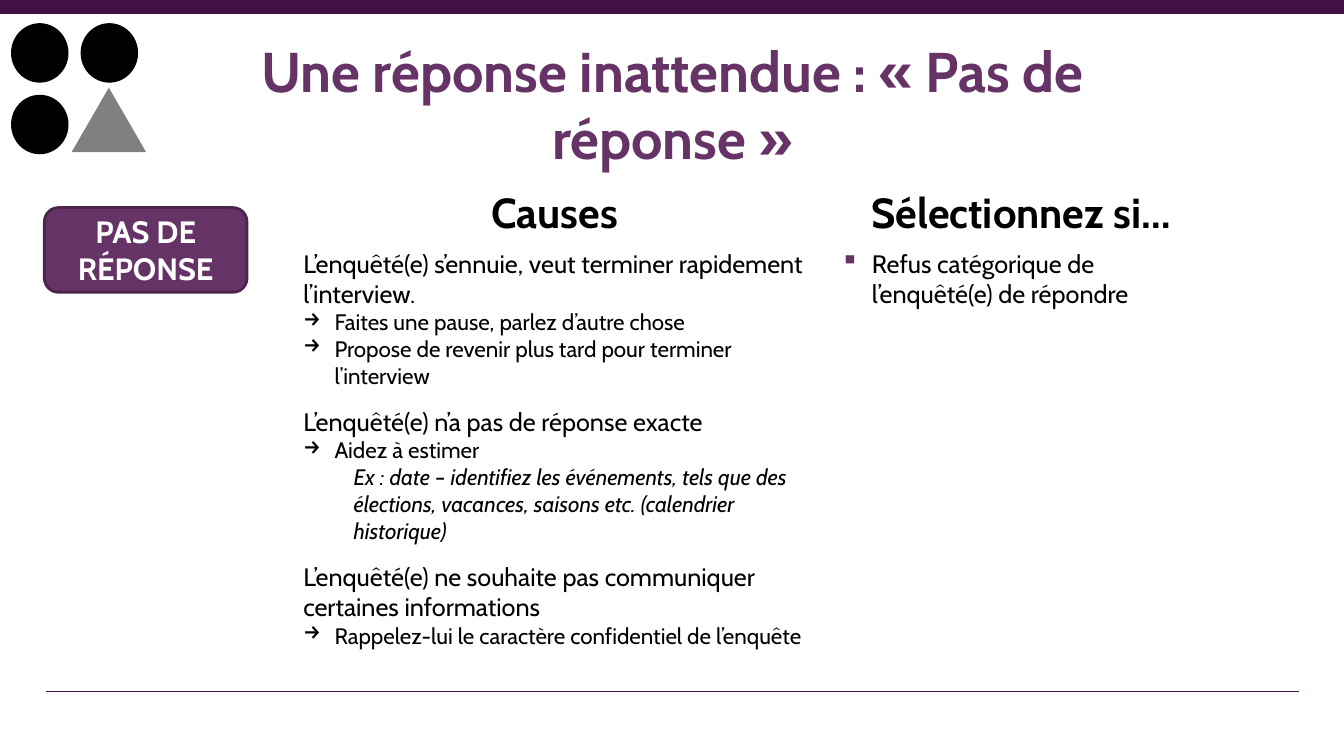
import pptx
import pptx.util
import pptx.dml.color
import pptx.enum.shapes
import pptx.enum.text
import pptx.oxml
import pptx.oxml.ns
from pptx.util import Inches

COLORS = {"plum": "663366", "dark": "411044", "edge": "4B264B",
          "black": "000000", "white": "FFFFFF", "grey": "808080"}
FONT = "Cabin"
KINDS = pptx.enum.shapes.MSO_SHAPE
CENTER = pptx.enum.text.PP_ALIGN.CENTER
GROW = pptx.enum.text.MSO_AUTO_SIZE.SHAPE_TO_FIT_TEXT
HANG = 0.31

# Text formats
TITLE = {"size": 40, "bold": True, "color": "plum", "align": CENTER}
HEADING = {"size": 30, "bold": True, "align": CENTER}
BUTTON = {"size": 22, "bold": True, "color": "white", "align": CENTER}
CAUSE = {"size": 18}
ADVICE = {"size": 16, "indent": HANG, "bullet": "→"}
EXAMPLE = {"size": 16, "italic": True, "indent": 0.5, "level": 1}
CRITERION = {"size": 18, "indent": HANG, "bullet": "▪", "bullet_color": "plum"}

CAUSES = [
    (2.41, 1.51, [
        ("L’enquêté(e) s’ennuie, veut terminer rapidement l’interview.", CAUSE),
        ("Faites une pause, parlez d’autre chose", ADVICE),
        ("Propose de revenir plus tard pour terminer l’interview", ADVICE)]),
    (3.98, 1.48, [
        ("L’enquêté(e) n’a pas de réponse exacte", CAUSE),
        ("Aidez à estimer", ADVICE),
        ("Ex : date – identifiez les événements, tels que des élections, "
         "vacances, saisons etc. (calendrier historique)", EXAMPLE)]),
    (5.52, 1.25, [
        ("L’enquêté(e) ne souhaite pas communiquer certaines informations", CAUSE),
        ("Rappelez-lui le caractère confidentiel de l’enquête", ADVICE)]),
]


def rgb(name):
    return pptx.dml.color.RGBColor.from_string(COLORS[name])


def add_xml(parent, tag, **attributes):
    element = pptx.oxml.parse_xml(f"<a:{tag} {pptx.oxml.ns.nsdecls('a')}/>")
    for name, value in attributes.items():
        element.set(name, value)
    parent.append(element)
    return element


def set_indent(para, style):
    properties = para._p.get_or_add_pPr()
    bullet = style.get("bullet")
    properties.set("marL", str(Inches(style.get("indent", 0))))
    properties.set("indent", str(-Inches(HANG) if bullet else 0))
    if not bullet:
        add_xml(properties, "buNone")
        return
    if "bullet_color" in style:
        color = add_xml(properties, "buClr")
        add_xml(color, "srgbClr", val=COLORS[style["bullet_color"]])
    add_xml(properties, "buChar", char=bullet)


def write(frame, lines):
    frame.word_wrap = True
    for index, (text, style) in enumerate(lines):
        para = frame.add_paragraph() if index else frame.paragraphs[0]
        para.level = style.get("level", 0)
        para.alignment = style.get("align", pptx.enum.text.PP_ALIGN.LEFT)
        set_indent(para, style)
        span = para.add_run()
        span.text = text
        font = {"name": FONT, "size": pptx.util.Pt(style["size"]),
                "bold": style.get("bold", False), "italic": style.get("italic", False)}
        for name, value in font.items():
            setattr(span.font, name, value)
        span.font.color.rgb = rgb(style.get("color", "black"))


def add_text(page, left, top, width, height, lines, grow=True):
    box = page.shapes.add_textbox(*map(Inches, (left, top, width, height)))
    write(box.text_frame, lines)
    if grow:
        box.text_frame.auto_size = GROW
    return box


def add_shape(page, kind, left, top, width, height, fill, edge=None):
    shape = page.shapes.add_shape(kind, *map(Inches, (left, top, width, height)))
    shape.shadow.inherit = False
    shape.fill.solid()
    shape.fill.fore_color.rgb = rgb(fill)
    if edge:
        shape.line.color.rgb = rgb(edge)
        shape.line.width = pptx.util.Pt(2)
    else:
        shape.line.fill.background()
    return shape


def add_rules(page):
    for left, right, y, weight in ((12.88, 0.46, 6.86, 1.25), (0, 13.35, 0.07, 10.25)):
        rule = page.shapes.add_connector(
            pptx.enum.shapes.MSO_CONNECTOR.STRAIGHT, *map(Inches, (left, y, right, y)))
        rule.line.color.rgb = rgb("dark")
        rule.line.width = pptx.util.Pt(weight)
        add_xml(rule._element.spPr, "effectLst")


def add_odd_one_out(page, left, top):
    # Three circles and one triangle
    for column, row in ((0, 0), (1, 0), (0, 1)):
        add_shape(page, KINDS.OVAL, left + column * 0.69, top + row * 0.71,
                  0.57, 0.59, "black")
    add_shape(page, KINDS.ISOSCELES_TRIANGLE, left + 0.6, top + 0.64, 0.74, 0.64, "grey")


def add_button(page, left, top, width, height):
    button = add_shape(page, KINDS.ROUNDED_RECTANGLE, left, top, width, height,
                       "plum", "edge")
    button.text_frame.vertical_anchor = pptx.enum.text.MSO_ANCHOR.MIDDLE
    write(button.text_frame, [("PAS DE RÉPONSE", BUTTON)])


def add_causes(page, left, top, width):
    add_text(page, left + 1.4, top, 2.38, 0.61, [("Causes", HEADING)])
    for cause_top, height, lines in CAUSES:
        add_text(page, left, cause_top, width, height, lines)


def add_criteria(page, left, top, width):
    add_text(page, left, top, width, 0.61, [("Sélectionnez si…", HEADING)])
    add_text(page, left, top + 0.61, width, 0.71,
             [("Refus catégorique de l’enquêté(e) de répondre", CRITERION)])


def main():
    deck = pptx.Presentation()
    deck.slide_width, deck.slide_height = Inches(13.33), Inches(7.5)
    page = deck.slides.add_slide(deck.slide_layouts[6])
    add_rules(page)
    add_text(page, 2.17, 0.31, 9, 0.95,
             [("Une réponse inattendue : « Pas de réponse »", TITLE)], grow=False)
    add_odd_one_out(page, 0.11, 0.23)
    add_button(page, 0.44, 2.06, 2.01, 0.84)
    add_causes(page, 2.91, 1.8, 5.2)
    add_criteria(page, 8.24, 1.8, 3.78)
    deck.save("out.pptx")


if __name__ == "__main__":
    main()
